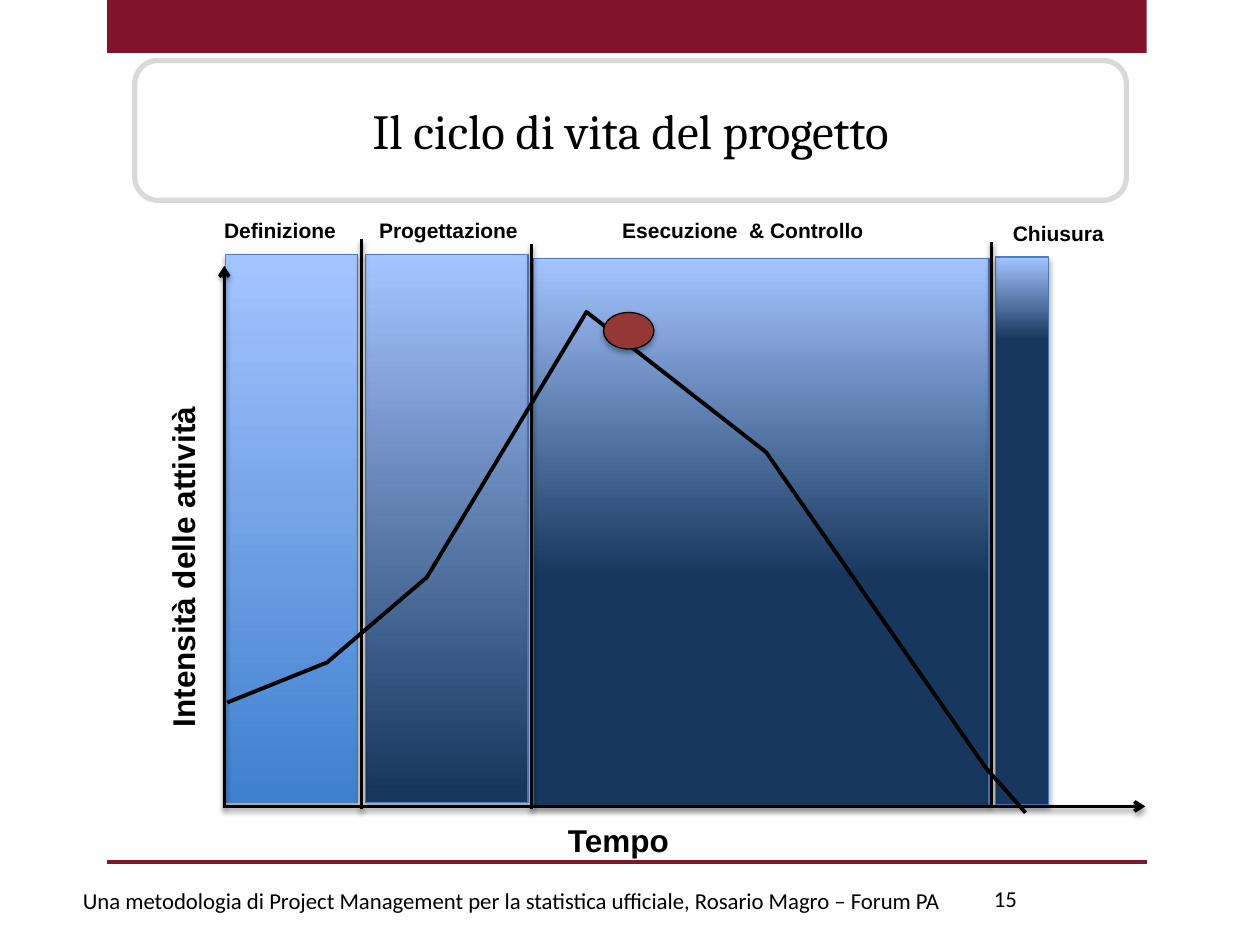
from lxml import etree
from pptx import Presentation
from pptx.chart.data import XyChartData
from pptx.dml.color import RGBColor
from pptx.enum.chart import XL_CHART_TYPE
from pptx.enum.shapes import MSO_CONNECTOR, MSO_SHAPE
from pptx.enum.text import MSO_ANCHOR, PP_ALIGN
from pptx.oxml import parse_xml
from pptx.oxml.ns import nsdecls, qn
from pptx.util import Inches, Pt

RECT, ROUND, OVAL = MSO_SHAPE.RECTANGLE, MSO_SHAPE.ROUNDED_RECTANGLE, MSO_SHAPE.OVAL
STRAIGHT = MSO_CONNECTOR.STRAIGHT
SCATTER = XL_CHART_TYPE.XY_SCATTER_SMOOTH_NO_MARKERS
CENTER, MIDDLE = PP_ALIGN.CENTER, MSO_ANCHOR.MIDDLE

COLORS = {
    "wine": "7F142A", "navy": "17375E", "blue": "3F80CE", "sky": "A4C4FF",
    "edge": "4B7EBC", "red": "953735", "grey": "D9D9D9",
    "black": "000000", "white": "FFFFFF",
}

# left, top, width, lower colour, where the lower colour ends (0 to 1)
PHASES = [
    (7.9, 2.04, 0.42, "navy", 0.85),
    (4.23, 2.05, 3.62, "navy", 0.42),
    (2.9, 2.02, 1.29, "navy", 0.02),
    (1.79, 2.02, 1.05, "blue", 0),
]
LABELS = [
    ("Definizione", 1.68, 1.68, 1.33),
    ("Progettazione", 2.91, 1.68, 1.32),
    ("Esecuzione  & Controllo", 4.84, 1.68, 2.5),
    ("Chiusura", 7.94, 1.7, 1.32),
]
BOUNDS = [(4.22, 1.94, 6.42), (2.87, 1.9, 6.42), (7.87, 1.92, 6.4)]
CURVE = [(0, 22), (0.5, 30), (1, 47), (1.8, 100), (2.7, 72), (3.8, 9), (4, 0)]
LABEL = {"size": Pt(12), "name": "Arial", "bold": True}
AXIS = {"size": Pt(18), "name": "Arial", "bold": True}
FOOT = {"size": Pt(13), "name": "Calibri"}
TITLE = {"size": Pt(28), "name": "Cambria"}


def rgb(name):
    return RGBColor.from_string(COLORS[name])


def style(font, form):
    for key, value in form.items():
        setattr(font, key, value)
    font.color.rgb = rgb("black")


def shade(item, alpha):
    """Give a shape or line a soft shadow below it."""
    item._element.spPr.append(parse_xml(
        f'<a:effectLst {nsdecls("a")}>'
        '<a:outerShdw blurRad="39370" dist="22860" dir="5400000" rotWithShape="0">'
        f'<a:srgbClr val="{COLORS["black"]}"><a:alpha val="{alpha * 1000}"/></a:srgbClr>'
        '</a:outerShdw></a:effectLst>'))


def add_box(slide, kind, place, fill=None, edge=None, width=0.75):
    box = slide.shapes.add_shape(kind, *map(Inches, place))
    if fill:
        box.fill.solid()
        box.fill.fore_color.rgb = rgb(fill)
    if edge:
        box.line.color.rgb = rgb(edge)
        box.line.width = Pt(width)
    else:
        box.line.fill.background()
    return box


def add_phase(slide, left, top, width, low, stop):
    box = add_box(slide, RECT, (left, top, width, 4.35), edge="edge")
    box.fill.gradient()
    box.fill.gradient_angle = 90
    pairs = [(stop, low), (1, "sky")]
    for mark, (place, name) in zip(box.fill.gradient_stops, pairs):
        mark.position = place
        mark.color.rgb = rgb(name)
    shade(box, 35)


def add_line(slide, start, end, color="black", arrow=False, shadow=True):
    line = slide.shapes.add_connector(STRAIGHT, *map(Inches, start + end))
    line.line.color.rgb = rgb(color)
    line.line.width = Pt(2)
    props = line._element.spPr
    if arrow:
        etree.SubElement(props.find(qn("a:ln")), qn("a:tailEnd"), type="arrow")
    if shadow:
        shade(line, 38)
    else:
        etree.SubElement(props, qn("a:effectLst"))


def add_text(slide, text, place, form, turn=0):
    box = slide.shapes.add_textbox(*map(Inches, place))
    box.rotation = turn
    box.text_frame.word_wrap = True
    run = box.text_frame.paragraphs[0].add_run()
    run.text = text
    style(run.font, form)


def add_title(slide, text):
    box = add_box(slide, ROUND, (1.07, 0.48, 7.87, 1.11), "white", "grey", 3)
    box.shadow.inherit = False
    frame = box.text_frame
    frame.vertical_anchor = MIDDLE
    para = frame.paragraphs[0]
    para.alignment = CENTER
    run = para.add_run()
    run.text = text
    style(run.font, TITLE)


def clear_frame(chart):
    """Make the chart see-through and fix its plot area."""
    blank = (f'<c:spPr {nsdecls("c", "a")}><a:noFill/>'
             '<a:ln><a:noFill/></a:ln></c:spPr>')
    root = chart._chartSpace
    root.find(qn("c:chart")).addnext(parse_xml(blank))
    plot = root.find(".//" + qn("c:plotArea"))
    plot.append(parse_xml(blank))
    old = plot.find(qn("c:layout"))
    if old is not None:
        plot.remove(old)
    sizes = {"x": 0.02, "y": 0.04, "w": 0.95, "h": 0.94}
    parts = "".join(f'<c:{key} val="{val}"/>' for key, val in sizes.items())
    plot.insert(0, parse_xml(
        f'<c:layout {nsdecls("c")}><c:manualLayout><c:layoutTarget val="inner"/>'
        '<c:xMode val="edge"/><c:yMode val="edge"/>'
        f'{parts}</c:manualLayout></c:layout>'))


def add_curve(slide):
    data = XyChartData()
    points = data.add_series("Series 1")
    for x, y in CURVE:
        points.add_data_point(x, y)
    place = map(Inches, (1.67, 2.1, 6.67, 4.44))
    chart = slide.shapes.add_chart(SCATTER, *place, data).chart
    chart.has_legend = chart.has_title = False
    style(chart.font, {"size": Pt(18), "name": "Arial"})
    for axis, top in ((chart.category_axis, 4), (chart.value_axis, 105)):
        axis.minimum_scale, axis.maximum_scale = 0, top
        axis.has_major_gridlines = False
        axis.visible = False
    chart.plots[0].vary_by_categories = False
    curve = chart.plots[0].series[0]
    curve.smooth = True
    curve.format.line.color.rgb = rgb("black")
    curve.format.line.width = Pt(2.25)
    clear_frame(chart)


def main():
    deck = Presentation()
    deck.slide_width, deck.slide_height = Inches(10), Inches(7.5)
    slide = deck.slides.add_slide(deck.slide_layouts[6])

    band = add_box(slide, RECT, (0.85, 0, 8.25, 0.42), "wine")
    band.shadow.inherit = False
    add_line(slide, (0.85, 6.84), (9.1, 6.84), "wine", shadow=False)
    for phase in PHASES:
        add_phase(slide, *phase)
    add_curve(slide)

    add_line(slide, (1.77, 6.4), (9.09, 6.4), arrow=True)
    add_line(slide, (1.78, 6.4), (1.78, 2.11), arrow=True)
    add_text(slide, "Tempo", (4.41, 6.47, 2.66, 0.4), AXIS)
    add_text(slide, "Intensità delle attività", (-0.22, 4, 3.34, 0.4), AXIS, 270)
    for x, top, low in BOUNDS:
        add_line(slide, (x, top), (x, low))
    for text, left, top, width in LABELS:
        add_text(slide, text, (left, top, width, 0.3), LABEL)
    peak = add_box(slide, OVAL, (4.79, 2.48, 0.4, 0.29), "red", "black")
    shade(peak, 35)

    add_text(slide, "Una metodologia di Project Management per la statistica "
             "ufficiale, Rosario Magro – Forum PA", (0.56, 6.99, 7.1, 0.4), FOOT)
    add_text(slide, "15", (7.79, 6.97, 1.91, 0.4), FOOT)
    add_title(slide, "Il ciclo di vita del progetto")
    deck.save("out.pptx")


if __name__ == "__main__":
    main()
